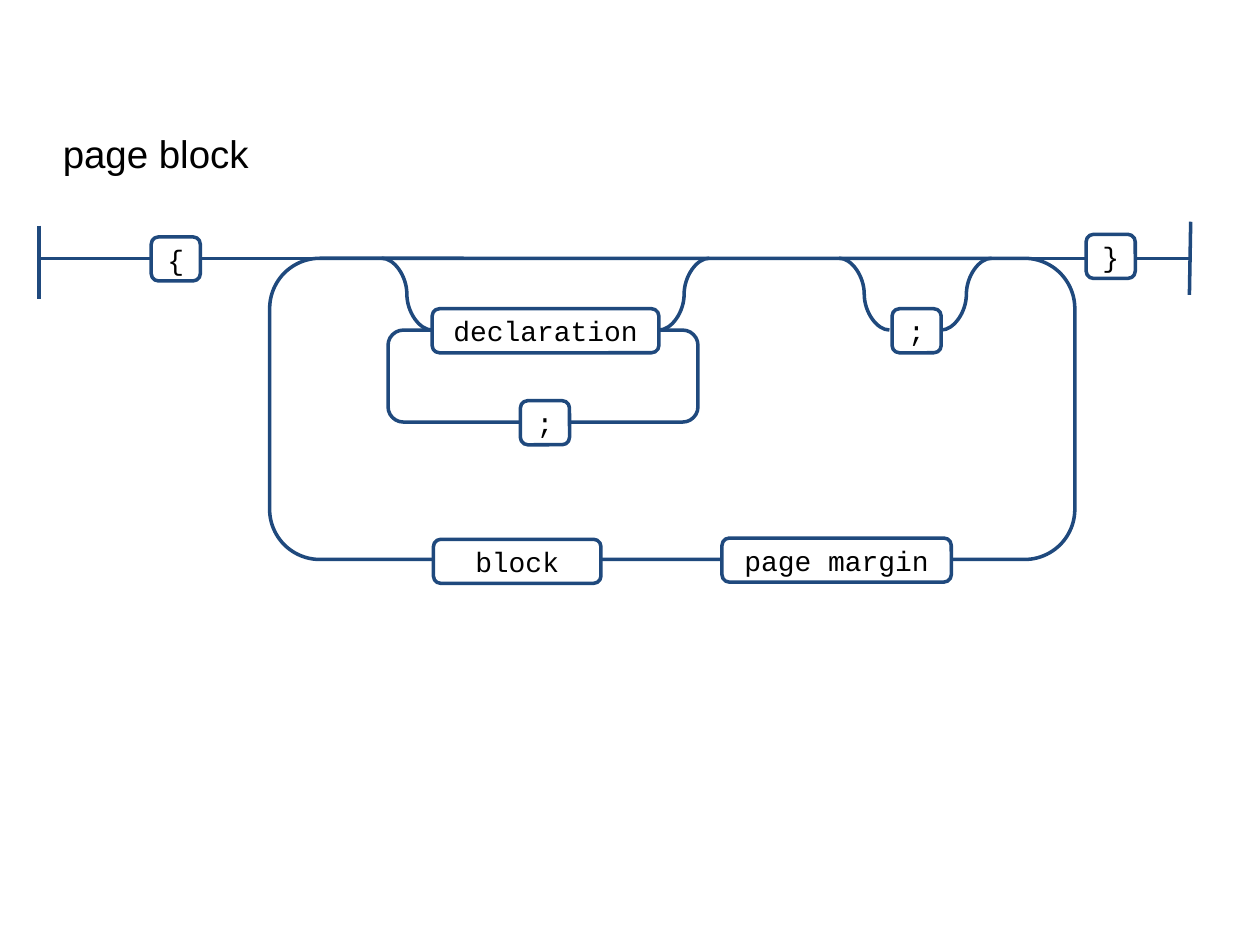
from lxml import etree
from pptx import Presentation
from pptx.dml.color import RGBColor
from pptx.enum import shapes, text
from pptx.oxml.ns import qn
from pptx.util import Inches, Pt

BLUE = "1F497D"


def color(value):
    return RGBColor.from_string(value)


def write(sp, content, size=16, font="Courier New", align=text.PP_ALIGN.CENTER,
          anchor=text.MSO_ANCHOR.MIDDLE):
    tf = sp.text_frame
    tf.word_wrap = True
    tf.vertical_anchor = anchor
    p = tf.paragraphs[0]
    p.alignment = align
    r = p.add_run()
    r.text = content
    r.font.size = Pt(size)
    r.font.name = font
    r.font.color.rgb = color("000000")


prs = Presentation()
prs.slide_width, prs.slide_height = Inches(10), Inches(7.5)
s = prs.slides.add_slide(prs.slide_layouts[6])

straight = shapes.MSO_CONNECTOR.STRAIGHT
curve = shapes.MSO_CONNECTOR.CURVE
rail_y, branch_y, box_h, small_w = 2.05, 2.62, 0.35, 0.39

loops = [(2.14, rail_y, 6.39, 2.39, ""), (3.08, branch_y, 2.46, 0.73, "")]
tracks = [
    (straight, 0.31, rail_y, 9.44, rail_y, 1.5),
    (straight, 0.31, 1.79, 0.31, 2.37, 2),
    (straight, 9.45, 1.76, 9.44, 2.34, 2),
    (curve, 3.43, branch_y, 3.03, rail_y, 2),
    (curve, 5.23, branch_y, 5.63, rail_y, 2),
    (curve, 7.06, branch_y, 6.66, rail_y, 2),
    (curve, 7.47, branch_y, 7.87, rail_y, 2),
]
tokens = [
    (3.43, 2.45, 1.8, box_h, "declaration"),
    (1.2, 1.88, small_w, box_h, "{"),
    (8.62, 1.86, small_w, box_h, "}"),
    (7.08, 2.45, small_w, box_h, ";"),
    (4.13, 3.18, small_w, box_h, ";"),
    (5.73, 4.27, 1.82, box_h, "page margin"),
    (3.44, 4.28, 1.33, box_h, "block"),
]

title = s.shapes.add_textbox(Inches(0.4), Inches(0.98), Inches(5.89), Inches(0.47))
write(title, "page block", size=22, font="Arial", align=text.PP_ALIGN.LEFT,
      anchor=text.MSO_ANCHOR.TOP)
title.text_frame.auto_size = text.MSO_AUTO_SIZE.SHAPE_TO_FIT_TEXT

for x, y, w, h, label in loops + tokens:
    if label == tokens[0][4]:
        for kind, x1, y1, x2, y2, width in tracks:
            track = s.shapes.add_connector(kind, Inches(x1), Inches(y1), Inches(x2), Inches(y2))
            track.line.color.rgb = color(BLUE)
            track.line.width = Pt(width)
            etree.SubElement(track._element.spPr, qn("a:effectLst"))
    sp = s.shapes.add_shape(shapes.MSO_SHAPE.FLOWCHART_ALTERNATE_PROCESS,
                            Inches(x), Inches(y), Inches(w), Inches(h))
    sp.shadow.inherit = False
    sp.fill.solid()
    sp.fill.fore_color.rgb = color("FFFFFF")
    sp.line.color.rgb = color(BLUE)
    sp.line.width = Pt(2)
    if label:
        write(sp, label)

prs.save("out.pptx")
